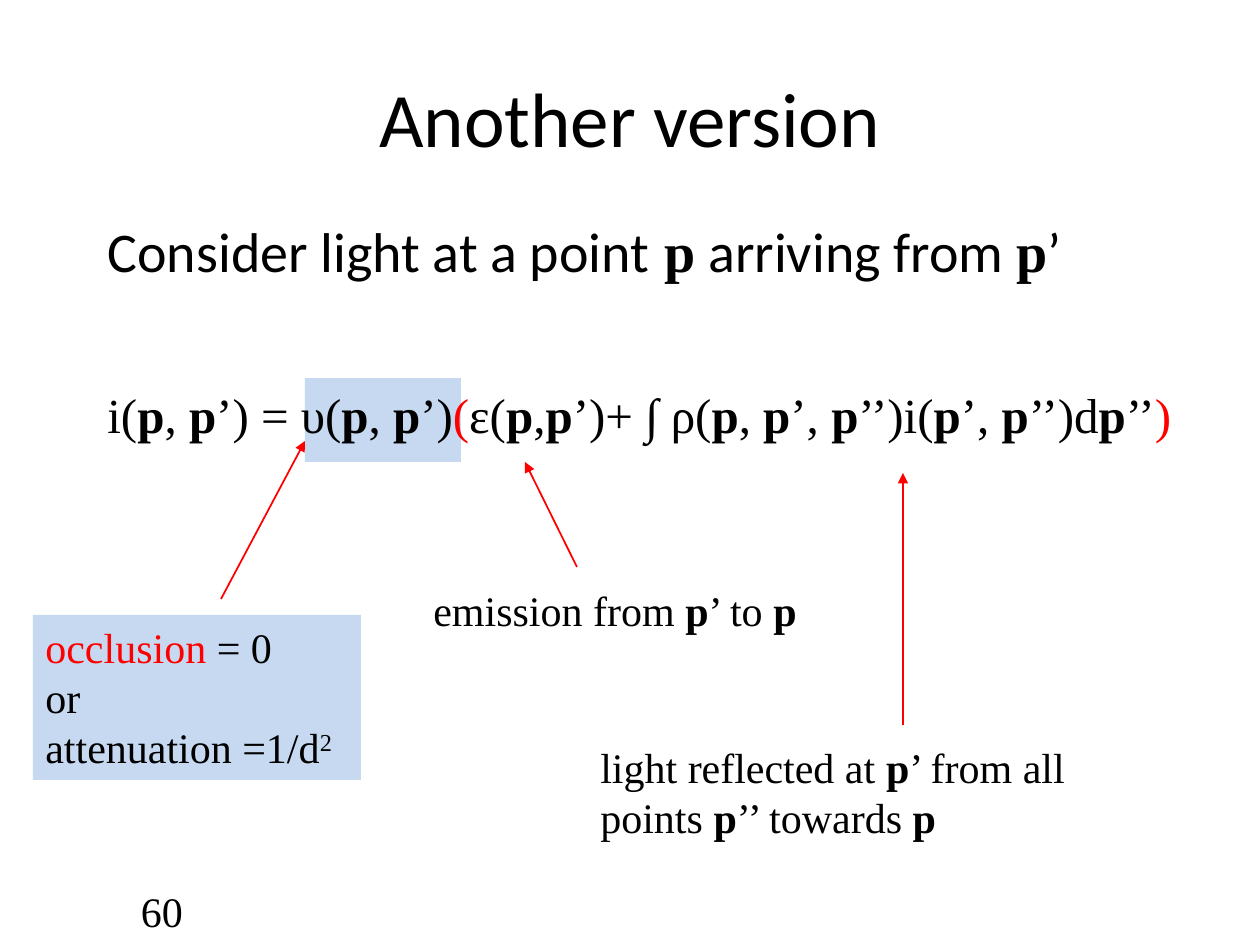
from dataclasses import dataclass

from lxml.etree import SubElement
from pptx import Presentation
from pptx.dml.color import RGBColor
from pptx.enum.shapes import MSO_CONNECTOR, MSO_SHAPE
from pptx.enum.text import MSO_ANCHOR, MSO_AUTO_SIZE, PP_ALIGN
from pptx.oxml.ns import qn
from pptx.util import Pt

EMU_PER_PX = 914400 / 126


@dataclass(frozen=True)
class Theme:
    ink: RGBColor = RGBColor(0x00, 0x00, 0x00)
    accent: RGBColor = RGBColor(0xFF, 0x00, 0x00)
    highlight: RGBColor = RGBColor(0xC6, 0xD9, 0xF1)
    sans: str = "Calibri"
    serif: str = "Times New Roman"
    title: int = 44
    body: int = 32
    equation: int = 28
    note: int = 24


@dataclass(frozen=True)
class Box:
    left: int
    top: int
    width: int
    height: int

    def emu(self) -> list[int]:
        return [px(n) for n in (self.left, self.top, self.width, self.height)]


@dataclass(frozen=True)
class Label:
    box: Box
    lines: tuple[str, ...]
    size: int
    filled: bool = False


@dataclass(frozen=True)
class Arrow:
    start: tuple[int, int]
    end: tuple[int, int]


THEME = Theme()

HIGHLIGHT = Box(305, 378, 156, 84)
LABELS = (
    Label(Box(95, 378, 1104, 72),
          ("i(*p*, *p*’) = υ(*p*, *p*’)~(~ε(*p*,*p*’)+ *∫ *ρ(*p*, *p*’, *p*’’)i(*p*’, *p*’’)d*p*’’~)~",),
          THEME.equation),
    Label(Box(33, 615, 328, 165),
          ("~occlusion~ = 0", "or", "attenuation =1/d^2^"), THEME.note, filled=True),
    Label(Box(421, 578, 392, 63), ("emission from *p*’ to *p*",), THEME.note),
    Label(Box(588, 735, 503, 113),
          ("light reflected at *p*’ from all", "points *p*’’ towards *p*"), THEME.note),
)
ARROWS = (
    Arrow((221, 599), (305, 441)),
    Arrow((577, 567), (525, 462)),
    Arrow((903, 725), (903, 473)),
)


def px(n: float) -> int:
    return round(n * EMU_PER_PX)


def place(shape, box: Box) -> None:
    shape.left, shape.top, shape.width, shape.height = box.emu()


def write(paragraph, marked: str, size: int, face: str, bold_face: str = THEME.serif) -> None:
    """Write text in which *…* is bold, ~…~ accented and ^…^ superscript."""
    paragraph.font.size = Pt(size)
    paragraph.font.name = face
    paragraph.font.color.rgb = THEME.ink
    for i, strong in enumerate(marked.split("*")):
        for j, accented in enumerate(strong.split("~")):
            for k, text in enumerate(accented.split("^")):
                if not text:
                    continue
                run = paragraph.add_run()
                run.text = text
                if i % 2:
                    run.font.bold = True
                    if bold_face != face:
                        run.font.name = bold_face
                if j % 2:
                    run.font.color.rgb = THEME.accent
                if k % 2:
                    run.font._element.set("baseline", "30000")


def add_highlight(slide, box: Box):
    panel = slide.shapes.add_shape(MSO_SHAPE.RECTANGLE, *box.emu())
    panel.shadow.inherit = False
    panel.fill.solid()
    panel.fill.fore_color.rgb = THEME.highlight
    panel.line.fill.background()
    return panel


def add_label(slide, label: Label) -> None:
    holder = (add_highlight(slide, label.box) if label.filled
              else slide.shapes.add_textbox(*label.box.emu()))
    frame = holder.text_frame
    frame.word_wrap = False
    frame.auto_size = MSO_AUTO_SIZE.SHAPE_TO_FIT_TEXT
    frame.vertical_anchor = MSO_ANCHOR.TOP
    for i, line in enumerate(label.lines):
        paragraph = frame.add_paragraph() if i else frame.paragraphs[0]
        paragraph.alignment = PP_ALIGN.LEFT
        write(paragraph, line, label.size, THEME.serif)


def add_arrow(slide, arrow: Arrow) -> None:
    ends = [px(n) for n in (*arrow.start, *arrow.end)]
    connector = slide.shapes.add_connector(MSO_CONNECTOR.STRAIGHT, *ends)
    connector.line.color.rgb = THEME.accent
    connector.line.width = Pt(1)
    SubElement(connector.line._get_or_add_ln(), qn("a:tailEnd"), type="triangle")
    SubElement(connector._element.spPr, qn("a:effectLst"))


def add_page_number(slide, box: Box, number: str) -> None:
    frame = slide.shapes.add_textbox(*box.emu()).text_frame
    frame.word_wrap = True
    frame.vertical_anchor = MSO_ANCHOR.MIDDLE
    frame.margin_left = px(15)
    paragraph = frame.paragraphs[0]
    write(paragraph, number, THEME.note, THEME.serif)
    paragraph._p.get_or_add_pPr().set("marL", str(px(63)))


def main() -> None:
    deck = Presentation()
    deck.slide_width, deck.slide_height = px(1260), px(945)
    slide = deck.slides.add_slide(deck.slide_layouts[1])

    title, body = slide.placeholders
    place(title, Box(63, 38, 1134, 157))
    title.text_frame.vertical_anchor = MSO_ANCHOR.MIDDLE
    heading = title.text_frame.paragraphs[0]
    heading.alignment = PP_ALIGN.CENTER
    write(heading, "Another version", THEME.title, THEME.sans)

    place(body, Box(95, 210, 1071, 105))
    premise = body.text_frame.paragraphs[0]
    write(premise, "Consider light at a point* p* arriving from *p*’", THEME.body, THEME.sans)
    premise_properties = premise._p.get_or_add_pPr()
    premise_properties.insert_element_before(
        premise_properties.makeelement(qn("a:buNone")), "a:tabLst", "a:defRPr", "a:extLst")

    add_highlight(slide, HIGHLIGHT)
    for label in LABELS:
        add_label(slide, label)
    for arrow in ARROWS:
        add_arrow(slide, arrow)
    add_page_number(slide, Box(63, 892, 294, 38), "60")

    deck.save("out.pptx")


if __name__ == "__main__":
    main()
